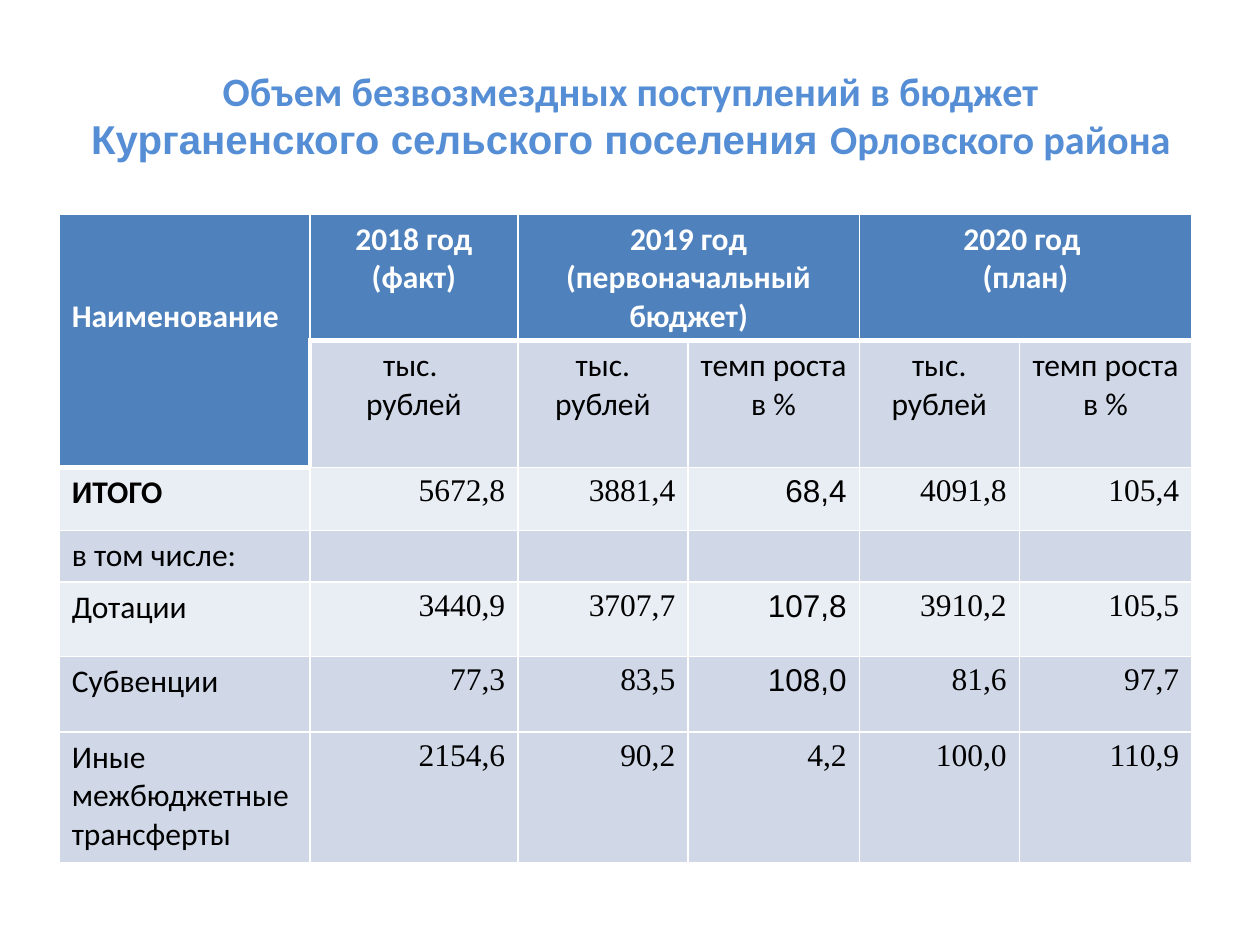
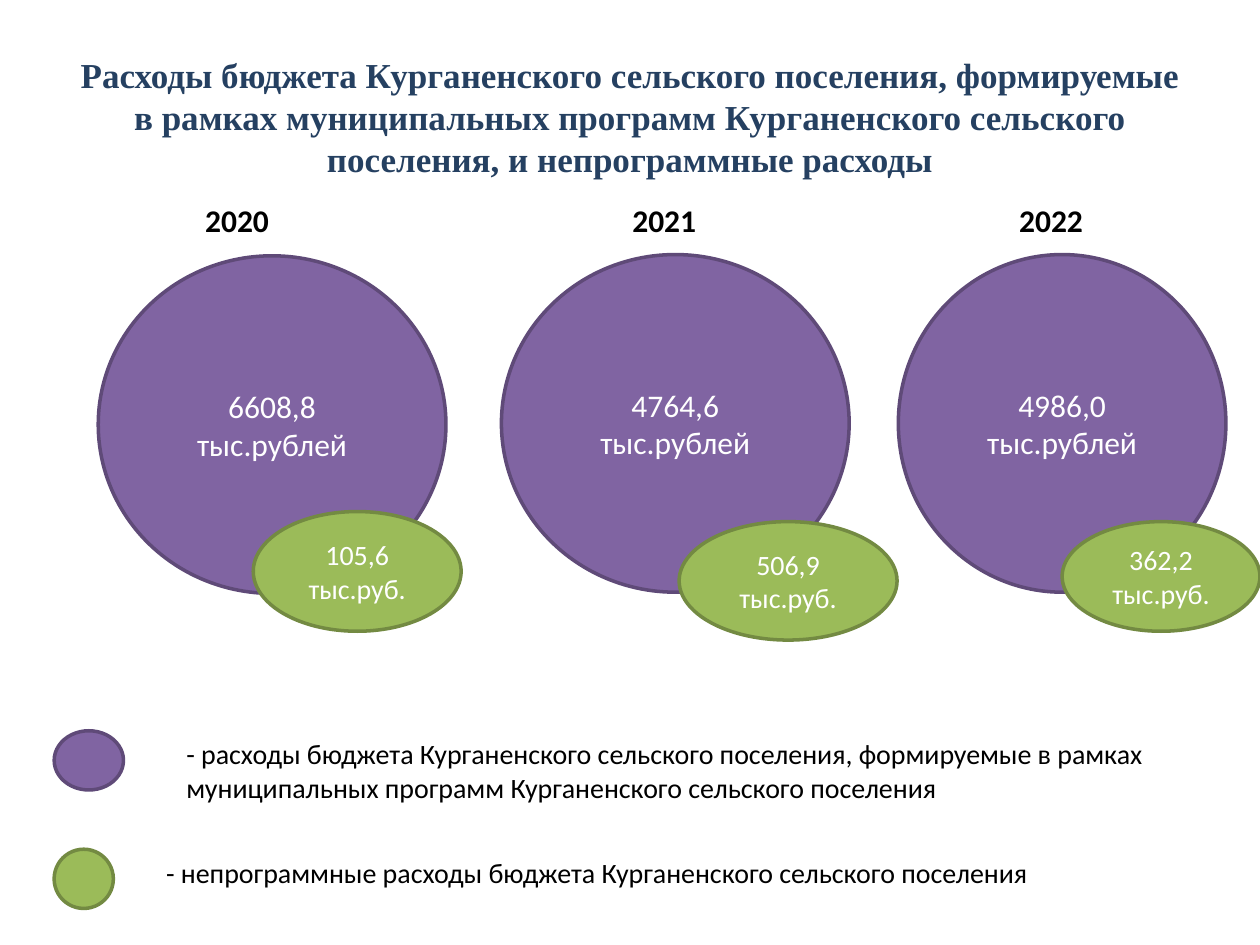
from itertools import product
from lxml.etree import SubElement
from pptx import Presentation
from pptx.dml.color import RGBColor
from pptx.enum.shapes import MSO_SHAPE
from pptx.enum.text import MSO_ANCHOR, PP_ALIGN
from pptx.oxml.ns import qn
from pptx.util import Inches, Pt

WIDTH, HEIGHT = Inches(10), Inches(7.5)
COLS, ROWS = 100, 75

WHITE = RGBColor(0xFF, 0xFF, 0xFF)
BLACK = RGBColor(0, 0, 0)
SKY = RGBColor(0x55, 0x8E, 0xD5)
NAVY = RGBColor(0x25, 0x40, 0x61)
BLUE = RGBColor(0x4F, 0x81, 0xBD)
BAND = RGBColor(0xD0, 0xD8, 0xE8)
PALE = RGBColor(0xE9, 0xED, 0xF4)
PURPLE = RGBColor(0x80, 0x64, 0xA2)
PLUM = RGBColor(0x5F, 0x4A, 0x78)
GREEN = RGBColor(0x9B, 0xBB, 0x59)
OLIVE = RGBColor(0x73, 0x8A, 0x42)

SANS, SERIF, ARIAL = "Calibri", "Times New Roman", "Arial"
LEFT, CENTER, RIGHT = PP_ALIGN.LEFT, PP_ALIGN.CENTER, PP_ALIGN.RIGHT

WIDTHS = [19.9, 16.5, 13.5, 13.6, 12.7, 13.7]
HEIGHTS = [9.7, 7.3, 5, 4.1, 5.9, 6, 10.4]
FILLS = [BLUE, BAND, PALE, BAND, PALE, BAND, BAND]
THOUSAND, GROWTH = "тыс. рублей", "темп роста в %"
BUDGET = [
    ["Наименование", "2018 год (факт)", "2019 год (первоначальный бюджет)", "",
     "2020 год \n(план)", ""],
    ["", "тыс. \nрублей", THOUSAND, GROWTH, THOUSAND, GROWTH],
    ["ИТОГО", "5672,8", "3881,4", "68,4", "4091,8", "105,4"],
    ["в том числе:", "", "", "", "", ""],
    ["Дотации", "3440,9", "3707,7", "107,8", "3910,2", "105,5"],
    ["Субвенции", "77,3", "83,5", "108,0", "81,6", "97,7"],
    ["Иные межбюджетные трансферты", "2154,6", "90,2", "4,2", "100,0", "110,9"],
]
MERGES = [((0, 0), (1, 0)), ((0, 2), (0, 3)), ((0, 4), (0, 5))]

YEARS = [
    ("2020", "6608,8", "105,6 тыс.руб.", (7.8, 20.3, 27.6, 26.8),
     (12.3, 20.3, 16.5, 9.5), 7.5),
    ("2021", "4764,6", "506,9\nтыс.руб.", (39.8, 20.2, 27.6, 26.8),
     (14.1, 21.2, 17.3, 9.4), 9.4),
    ("2022", "4986,0", "362,2 тыс.руб.", (71.3, 20.2, 26, 26.8),
     (13, 21.2, 15.7, 8.7), 8.6),
]
KEYS = [
    ("- расходы бюджета Курганенского сельского поселения, формируемые в рамках "
     "муниципальных программ Курганенского сельского поселения",
     (4.3, 58, 89, 6.4), (5.5, 4.7), 9.5, PURPLE, PLUM),
    ("- непрограммные расходы бюджета Курганенского сельского поселения",
     (4.3, 67.4, 87.4, 3.7), (4.7, 4.7), 7.9, GREEN, OLIVE),
]


def place(x, y, w, h):
    across, down = WIDTH / COLS, HEIGHT / ROWS
    return round(x * across), round(y * down), round(w * across), round(h * down)


def write(frame, text, size=18, font=SANS, color=BLACK, bold=False, align=LEFT):
    if isinstance(text, str):
        lines = [[(line, font)] for line in text.split("\n")]
    else:
        lines = [text]
    for i, line in enumerate(lines):
        para = frame.add_paragraph() if i else frame.paragraphs[0]
        para.alignment = align
        for words, face in line:
            run = para.add_run()
            run.text = words
            run.font.size, run.font.name, run.font.bold = Pt(size), face, bold
            run.font.color.rgb = color


def label(slide, box, text, anchor=MSO_ANCHOR.TOP, **style):
    frame = slide.shapes.add_textbox(*place(*box)).text_frame
    frame.word_wrap = True
    frame.vertical_anchor = anchor
    write(frame, text, **style)


def title(slide, box, text, **style):
    label(slide, box, text, MSO_ANCHOR.MIDDLE, bold=True, align=CENTER, **style)


def oval(slide, box, fill, edge, text="", size=18):
    shape = slide.shapes.add_shape(MSO_SHAPE.OVAL, *place(*box))
    shape.shadow.inherit = False
    shape.fill.solid()
    shape.fill.fore_color.rgb = fill
    shape.line.color.rgb = edge
    shape.line.width = Pt(2)
    if text:
        frame = shape.text_frame
        frame.word_wrap = True
        frame.vertical_anchor = MSO_ANCHOR.MIDDLE
        write(frame, text, size, color=WHITE, align=CENTER)


def border(cell, row, col):
    heavy = {
        "L": (row, col) == (1, 1),
        "R": False,
        "T": (row == 1 and col > 0) or (row, col) == (2, 0),
        "B": row == 0 or (row, col) == (1, 0),
    }
    props = cell._tc.get_or_add_tcPr()
    for side, thick in heavy.items():
        line = SubElement(props, qn("a:ln" + side), w=str(Pt(3 if thick else 1)))
        fill = SubElement(line, qn("a:solidFill"))
        SubElement(fill, qn("a:srgbClr"), val=str(WHITE))


def style(row, col):
    if row == 0:
        return dict(color=WHITE, bold=True, align=CENTER if col else LEFT)
    if row == 1:
        return dict(align=CENTER)
    if col == 0:
        return dict(bold=row == 2)
    last = len(BUDGET) - 1
    return dict(font=ARIAL if col == 3 and row < last else SERIF, align=RIGHT)


def grid(slide, x, y):
    box = place(x, y, sum(WIDTHS), sum(HEIGHTS))
    table = slide.shapes.add_table(len(HEIGHTS), len(WIDTHS), *box).table
    for col, width in zip(table.columns, WIDTHS):
        col.width = round(width * WIDTH / COLS)
    for row, height in zip(table.rows, HEIGHTS):
        row.height = round(height * HEIGHT / ROWS)
    for row, col in product(range(len(HEIGHTS)), range(len(WIDTHS))):
        cell = table.cell(row, col)
        border(cell, row, col)
        cell.fill.solid()
        cell.fill.fore_color.rgb = BLUE if (row, col) == (1, 0) else FILLS[row]
        if BUDGET[row][col]:
            write(cell.text_frame, BUDGET[row][col], **style(row, col))
    for first, last in MERGES:
        table.cell(*first).merge(table.cell(*last))
    table.cell(0, 0).margin_top = round(6.6 * HEIGHT / ROWS)


def year(slide, box, name, main, other, dot, shift):
    x, y, w, h = box
    dx, dy, wide, high = dot
    oval(slide, box, PURPLE, PLUM, main + "\nтыс.рублей")
    oval(slide, (x + dx, y + dy, wide, high), GREEN, OLIVE, other, 16)
    label(slide, (x + shift, 15.5, 7.9, 4), name, bold=True)


def key(slide, box, text, mark, indent, fill, edge):
    x, y, w, h = box
    oval(slide, (x, y, *mark), fill, edge)
    label(slide, (x + indent, y, w - indent, h), text, size=16)


def income(slide):
    title(slide, (5.1, 3.6, 90, 11), [
        ("Объем безвозмездных поступлений в бюджет ", SANS),
        ("Курганенского сельского поселения ", ARIAL),
        ("Орловского района", SANS),
    ], size=23, color=SKY)
    grid(slide, 4.7, 17)


def costs(slide):
    title(slide, (5, 3, 90, 12.5),
          "Расходы бюджета Курганенского сельского поселения, формируемые "
          "в рамках муниципальных программ Курганенского сельского поселения, "
          "и непрограммные расходы", size=20, font=SERIF, color=NAVY)
    for name, main, other, box, dot, shift in YEARS:
        year(slide, box, name, main, other, dot, shift)
    for text, box, mark, indent, fill, edge in KEYS:
        key(slide, box, text, mark, indent, fill, edge)


def main():
    deck = Presentation()
    deck.slide_width, deck.slide_height = WIDTH, HEIGHT
    for build in (income, costs):
        build(deck.slides.add_slide(deck.slide_layouts[6]))
    deck.save("out.pptx")


if __name__ == "__main__":
    main()
